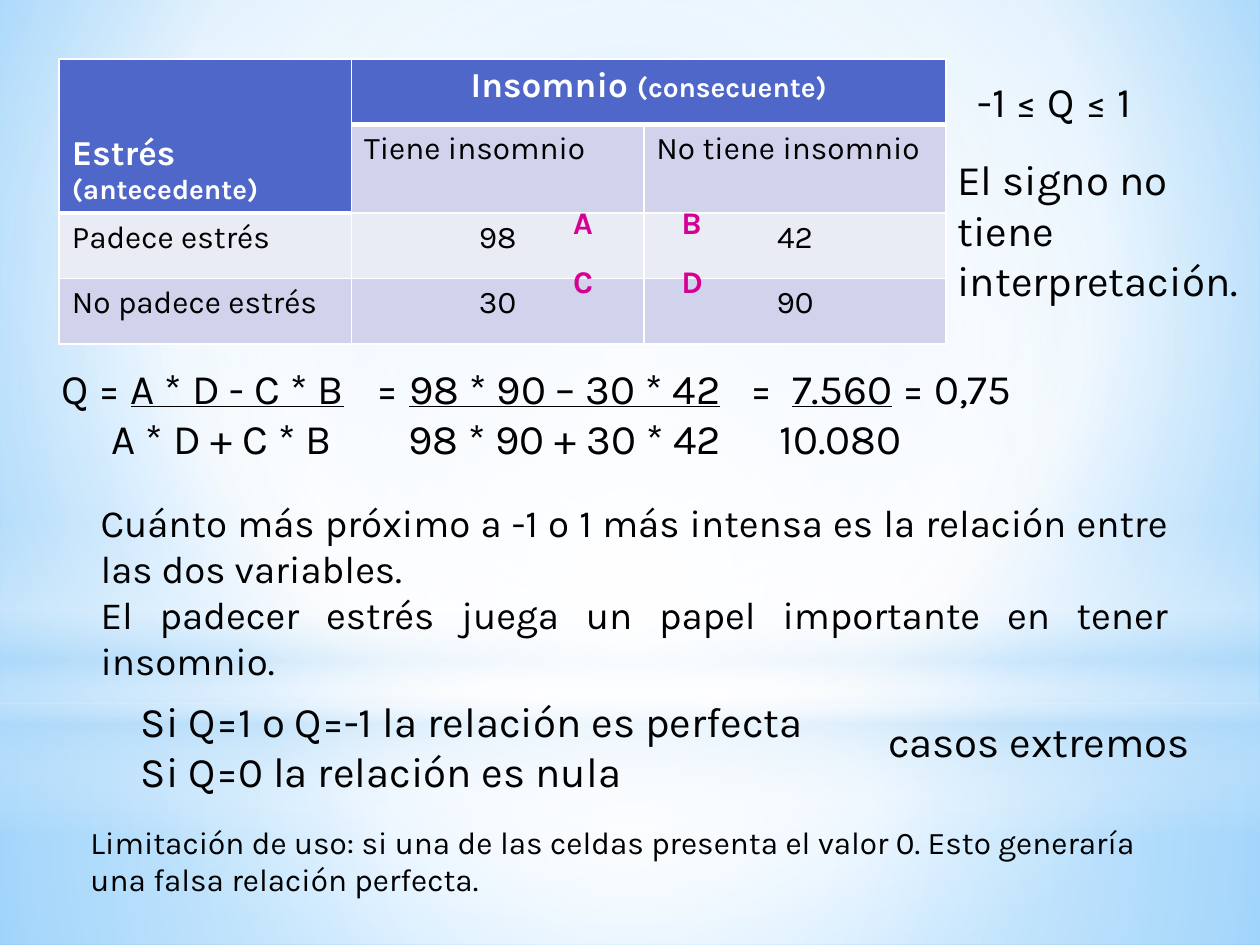
from lxml import etree
from pptx import Presentation
from pptx import util as u
from pptx.dml.color import RGBColor
from pptx.enum import shapes, text
from pptx.oxml.ns import qn

PX = 9144
FONT = "Karla"
C = {"ink": "000000", "white": "FFFFFF", "head": "4E67C8", "band": "D0D3EB",
     "pale": "E9EBF5", "letter": "D60093", "sky": "9ED5FF", "deep": "5BB9FF",
     "mist": "B4DCFA"}
CENTRE = (50, 50, 50, 50)


def px(*lengths):
    """Turn px lengths into EMU."""
    return [n * PX for n in lengths]


def child(parent, tag, **attrs):
    """Append an XML element with attributes."""
    return etree.SubElement(parent, qn(tag), {k: str(v) for k, v in attrs.items()})


def gradient(fill, root, stops, to=None):
    """Fill with a circular gradient, or a vertical one when no centre is given."""
    fill.solid()
    solid = root.find(".//" + qn("a:solidFill"))
    grad = etree.Element(qn("a:gradFill"), rotWithShape="1")
    stop_list = child(grad, "a:gsLst")
    for pos, color, alpha in stops:
        gs = child(stop_list, "a:gs", pos=pos * 1000)
        clr = child(gs, "a:srgbClr", val=C[color])
        if alpha < 100:
            child(clr, "a:alpha", val=alpha * 1000)
    if to:
        path = child(grad, "a:path", path="circle")
        child(path, "a:fillToRect", **{k: v * 1000 for k, v in zip("ltrb", to)})
    else:
        child(grad, "a:lin", ang=90 * 60000, scaled=0)
    solid.getparent().replace(solid, grad)


def style(r, size, color="ink", bold=False, underline=None):
    """Format one run."""
    f = r.font
    f.name, f.size, f.bold, f.underline = FONT, u.Pt(size), bold, underline
    f.color.rgb = RGBColor.from_string(C[color])


def textbox(s, box, lines, size=24, color="ink", bold=False, align=None):
    """Place a wrapped text box with one paragraph per line."""
    sp = s.shapes.add_textbox(*px(*box))
    tf = sp.text_frame
    tf.word_wrap = True
    tf.auto_size = text.MSO_AUTO_SIZE.SHAPE_TO_FIT_TEXT
    tf.text = "\n".join(lines)
    for p in tf.paragraphs:
        p.alignment = align
        style(p.runs[0], size, color, bold)
    return tf


def backdrop(s, w, h):
    """Paint the sky gradient and the light layers over it."""
    gradient(s.background.fill, s.element.cSld,
             [(0, "sky", 100), (60, "white", 100), (100, "deep", 100)], (20, 10, 20, 60))
    rect, oval = shapes.MSO_SHAPE.RECTANGLE, shapes.MSO_SHAPE.OVAL
    horizon = 558
    layers = [
        (rect, (0, horizon, w, h - horizon),
         [(0, "white", 91), (37, "white", 76), (100, "mist", 79)], CENTRE),
        (rect, (0, 0, w, horizon),
         [(0, "white", 89), (48, "white", 62), (100, "mist", 79)], CENTRE),
        (rect, (0, 412, w, 250),
         [(0, "white", 0), (29, "white", 30), (45, "mist", 40), (55, "white", 26),
          (65, "mist", 60), (100, "white", 0)], None),
        (oval, (0, 175, w, horizon), [(0, "white", 100), (56, "white", 0)], CENTRE),
    ]
    for kind, box, stops, to in layers:
        sp = s.shapes.add_shape(kind, *px(*box))
        sp.shadow.inherit = False
        sp.line.fill.background()
        gradient(sp.fill, sp.element.spPr, stops, to)


def fraction(s, box, lead, top, bottom, stop, indent, result=""):
    """Place a fraction: underlined numerator at a tab stop, denominator indented."""
    tf = textbox(s, box, [lead + "\t", bottom])
    tf.vertical_anchor = text.MSO_ANCHOR.MIDDLE
    upper, lower = tf.paragraphs
    for words, line in ((top, True), (result, False)):
        if words:
            r = upper.add_run()
            r.text = words
            style(r, 24, underline=line)
    tabs = child(upper._p.get_or_add_pPr(), "a:tabLst")
    child(tabs, "a:tab", pos=stop * PX, algn="l")
    lower._p.get_or_add_pPr().set("marL", str(indent * PX))


def borders(cell, row, col):
    """Draw white cell borders, thick below the header cells."""
    last_head = 1 if col == 0 else 0
    widths = {"L": 1, "R": 1, "T": 3 if row == last_head + 1 else 1,
              "B": 3 if row == last_head else 1}
    tc_pr = cell._tc.get_or_add_tcPr()
    for side, width in widths.items():
        ln = child(tc_pr, "a:ln" + side, w=u.Pt(width))
        child(child(ln, "a:solidFill"), "a:srgbClr", val=C["white"])


def insomnia_table(s, x, y):
    """Build the two-by-two contingency table with its cell letters."""
    rows = [["Estrés (antecedente)", "Insomnio (consecuente)", ""],
            ["", "Tiene insomnio", "No tiene insomnio"],
            ["Padece estrés", "98", "42"],
            ["No padece estrés", "30", "90"]]
    widths, heights = (232, 232, 240), (52, 69, 52, 52)
    tb = s.shapes.add_table(4, 3, *px(x, y, sum(widths), sum(heights))).table
    tb.first_row = tb.horz_banding = False
    for column, w in zip(tb.columns, widths):
        column.width = w * PX
    for i, (values, h) in enumerate(zip(rows, heights)):
        tb.rows[i].height = h * PX
        for j, value in enumerate(values):
            cell = tb.cell(i, j)
            borders(cell, i, j)
            head = i == 0 or (i == 1 and j == 0)
            cell.fill.solid()
            cell.fill.fore_color.rgb = RGBColor.from_string(
                C["head" if head else "pale" if i == 2 else "band"])
            p = cell.text_frame.paragraphs[0]
            if j and i != 1:
                p.alignment = text.PP_ALIGN.CENTER
            if head and value:
                name, note = value.split(" ")
                for words, size in ((name + " ", 20), (note, 16)):
                    r = p.add_run()
                    r.text = words
                    style(r, size, "white", True)
            elif value:
                p.text = value
                style(p.runs[0], 18)
    tb.cell(0, 0).merge(tb.cell(1, 0))
    tb.cell(0, 1).merge(tb.cell(0, 2))
    tb.cell(0, 0).vertical_anchor = text.MSO_ANCHOR.BOTTOM
    for k, letter in enumerate("ABCD"):
        box = (x + 398 + k % 2 * 86, y + 109 + k // 2 * 47, 40, 40)
        textbox(s, box, [letter], 18, "letter", True)


def formula(s, x, y):
    """Write the chain of fractions that gives Q."""
    fraction(s, (x, y, 273, 91), "Q =", "A * D - C * B", "A * D + C * B", 55, 40)
    fraction(s, (x + 250, y, 320, 91), "=", "98 * 90 – 30 * 42",
             "98 * 90 + 30 * 42", 26, 25)
    fraction(s, (x + 547, y, 250, 91), "=", "7.560", "10.080", 33, 23, " = 0,75")


def reading(s, x, y):
    """Write how Q is read, its extreme cases and its limitation."""
    textbox(s, (x + 8, y, 867, 158),
            ["Cuánto más próximo a -1 o 1 más intensa es la relación entre las dos variables.",
             "El padecer estrés juega un papel importante en tener insomnio."],
            22, align=text.PP_ALIGN.JUSTIFY)
    textbox(s, (x + 40, y + 156, 602, 91),
            ["Si Q=1 o Q=-1 la relación es perfecta", "Si Q=0 la relación es nula"])
    textbox(s, (x + 633, y + 172, 261, 50), ["casos extremos"])
    textbox(s, (x, y + 257, 867, 71),
            ["Limitación de uso: si una de las celdas presenta el valor 0. "
             "Esto generaría una falsa relación perfecta."], 18)


def main():
    """Build and save the slide."""
    prs = Presentation()
    prs.slide_width, prs.slide_height = px(1000, 750)
    s = prs.slides.add_slide(prs.slide_layouts[6])
    backdrop(s, 1000, 750)
    formula(s, 39, 282)
    textbox(s, (766, 55, 203, 50), ["-1 ≤ Q ≤ 1"])
    textbox(s, (750, 117, 250, 131), ["El signo no tiene interpretación."])
    insomnia_table(s, 47, 47)
    reading(s, 62, 391)
    prs.save("out.pptx")


if __name__ == "__main__":
    main()
